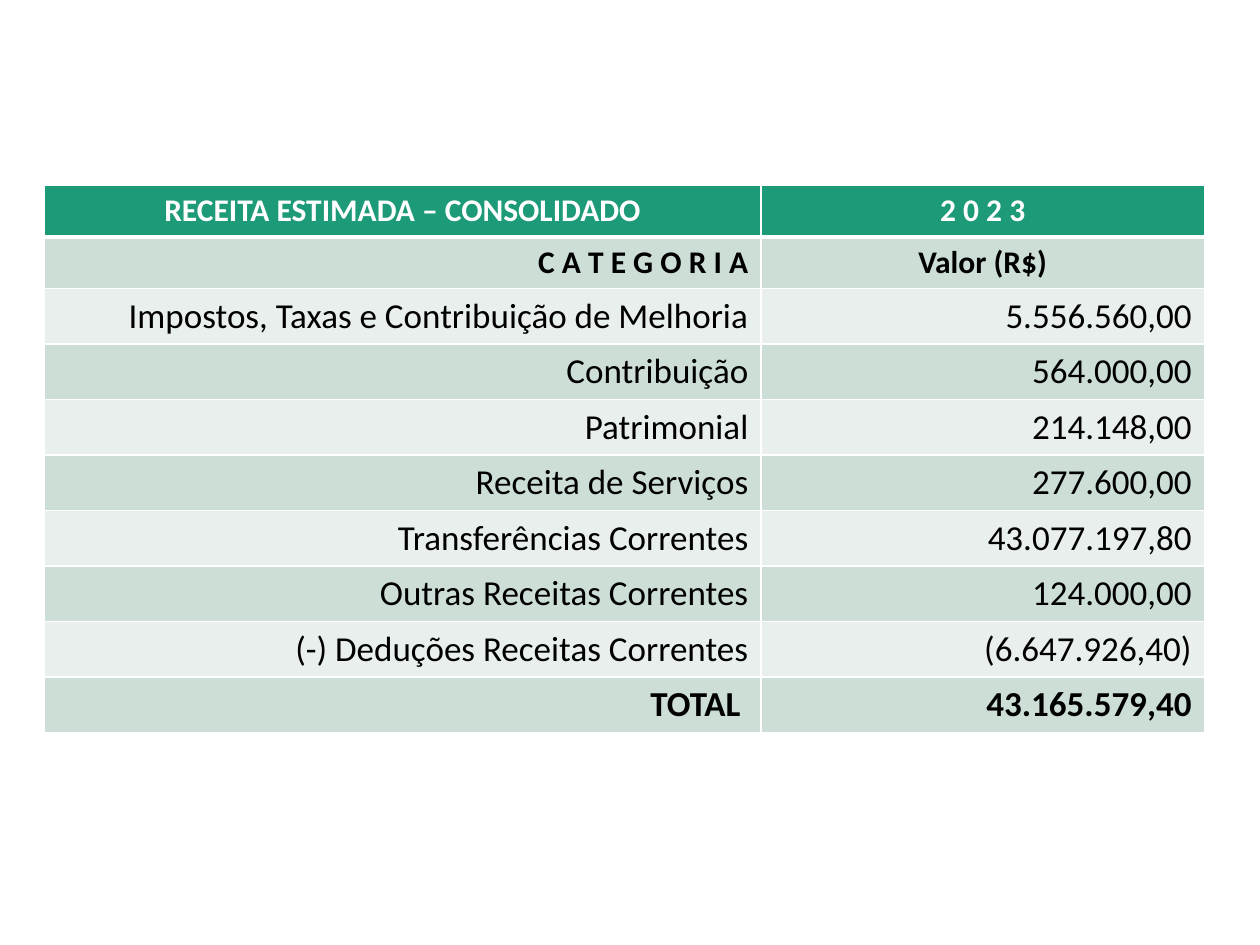
from lxml.etree import SubElement
from pptx import Presentation
from pptx.dml.color import RGBColor
from pptx.enum.text import MSO_ANCHOR, PP_ALIGN
from pptx.oxml.ns import qn
from pptx.util import Inches, Pt

COLORS = {
    "header": "1D9A78",
    "dark_band": "CDDED6",
    "light_band": "E8EFEC",
    "white": "FFFFFF",
    "black": "000000",
}
FONT = "Calibri"
COLUMN_WIDTHS = (5.69, 3.52)
ROW_HEIGHT = 0.41
ROWS = [
    ("RECEITA ESTIMADA – CONSOLIDADO", "2 0 2 3"),
    ("C A T E G O R I A", "Valor (R$)"),
    ("Impostos, Taxas e Contribuição de Melhoria", "5.556.560,00"),
    ("Contribuição", "564.000,00"),
    ("Patrimonial", "214.148,00"),
    ("Receita de Serviços", "277.600,00"),
    ("Transferências Correntes", "43.077.197,80"),
    ("Outras Receitas Correntes", "124.000,00"),
    ("(-) Deduções Receitas Correntes", "(6.647.926,40)"),
    ("TOTAL ", "43.165.579,40"),
]


def rgb(name):
    return RGBColor.from_string(COLORS[name])


def set_borders(cell, top, bottom):
    """Draw white cell borders; widths are in points."""
    tc_pr = cell._tc.get_or_add_tcPr()
    for side, width in (("L", 1), ("R", 1), ("T", top), ("B", bottom)):
        ln = SubElement(tc_pr, qn(f"a:ln{side}"), w=str(Pt(width)))
        fill = SubElement(ln, qn("a:solidFill"))
        SubElement(fill, qn("a:srgbClr"), val=COLORS["white"])


def format_cell(cell, text, row, col):
    is_header = row == 0
    is_heading = row <= 1

    # Borders go before the fill in the cell properties
    set_borders(cell, top=3 if row == 1 else 1, bottom=3 if is_header else 1)
    band = "dark_band" if row % 2 else "light_band"
    cell.fill.solid()
    cell.fill.fore_color.rgb = rgb("header" if is_header else band)
    cell.vertical_anchor = MSO_ANCHOR.TOP

    cell.text = text
    p = cell.text_frame.paragraphs[0]
    centered = is_header or (is_heading and col == 1)
    p.alignment = PP_ALIGN.CENTER if centered else PP_ALIGN.RIGHT
    p.font.name = FONT
    p.font.size = Pt(18 if is_heading else 20)
    p.font.bold = is_heading or row == len(ROWS) - 1
    p.font.color.rgb = rgb("white" if is_header else "black")


def add_revenue_table(s, left, top):
    table = s.shapes.add_table(
        len(ROWS), len(COLUMN_WIDTHS), Inches(left), Inches(top),
        Inches(sum(COLUMN_WIDTHS)), Inches(ROW_HEIGHT * len(ROWS)),
    ).table
    for column, width in zip(table.columns, COLUMN_WIDTHS):
        column.width = Inches(width)
    for i, values in enumerate(ROWS):
        table.rows[i].height = Inches(ROW_HEIGHT)
        for j, text in enumerate(values):
            format_cell(table.cell(i, j), text, i, j)


def main():
    prs = Presentation()
    prs.slide_width, prs.slide_height = Inches(10), Inches(7.5)
    s = prs.slides.add_slide(prs.slide_layouts[6])

    # Estimated revenue by category
    add_revenue_table(s, 0.35, 1.47)
    prs.save("out.pptx")


if __name__ == "__main__":
    main()
